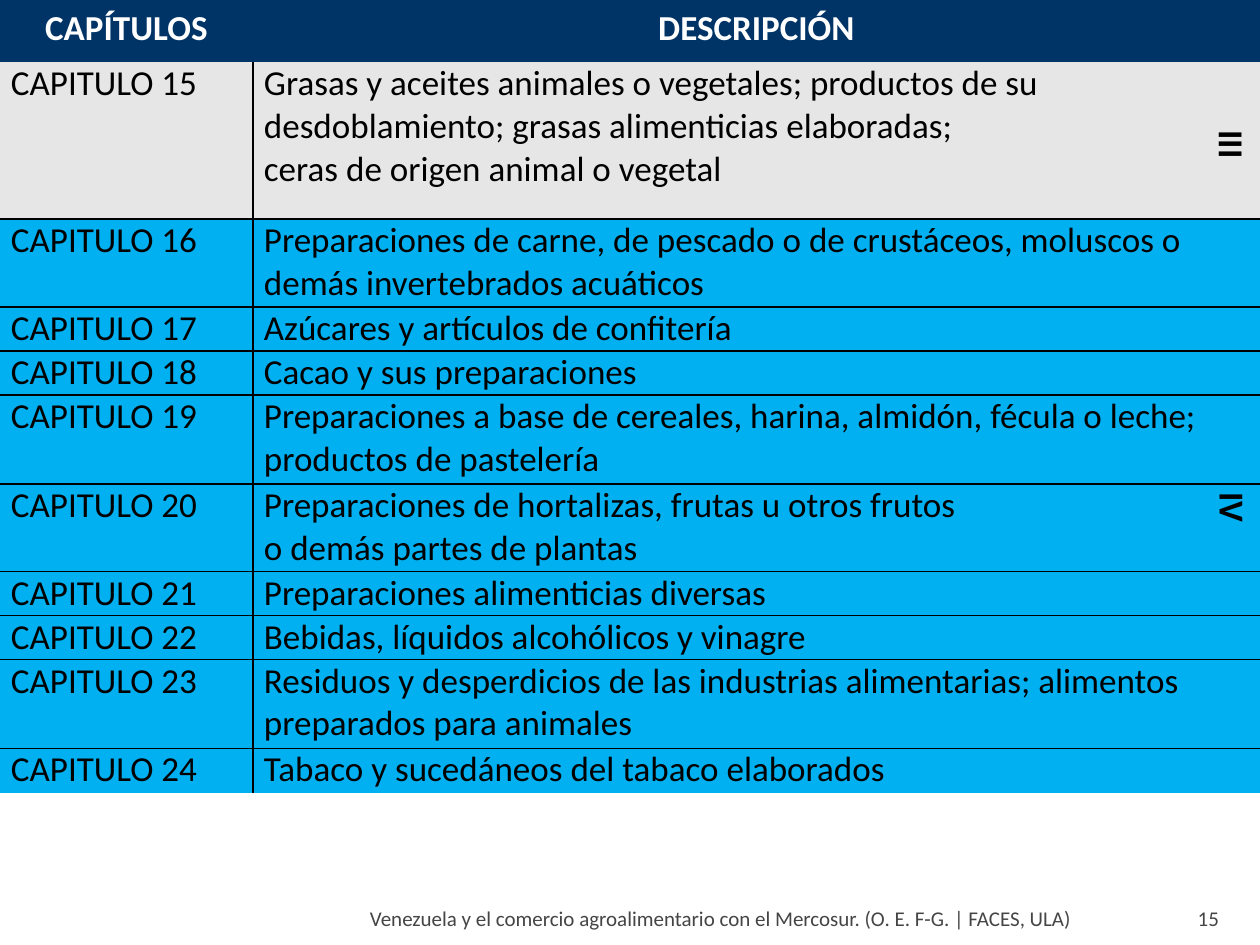
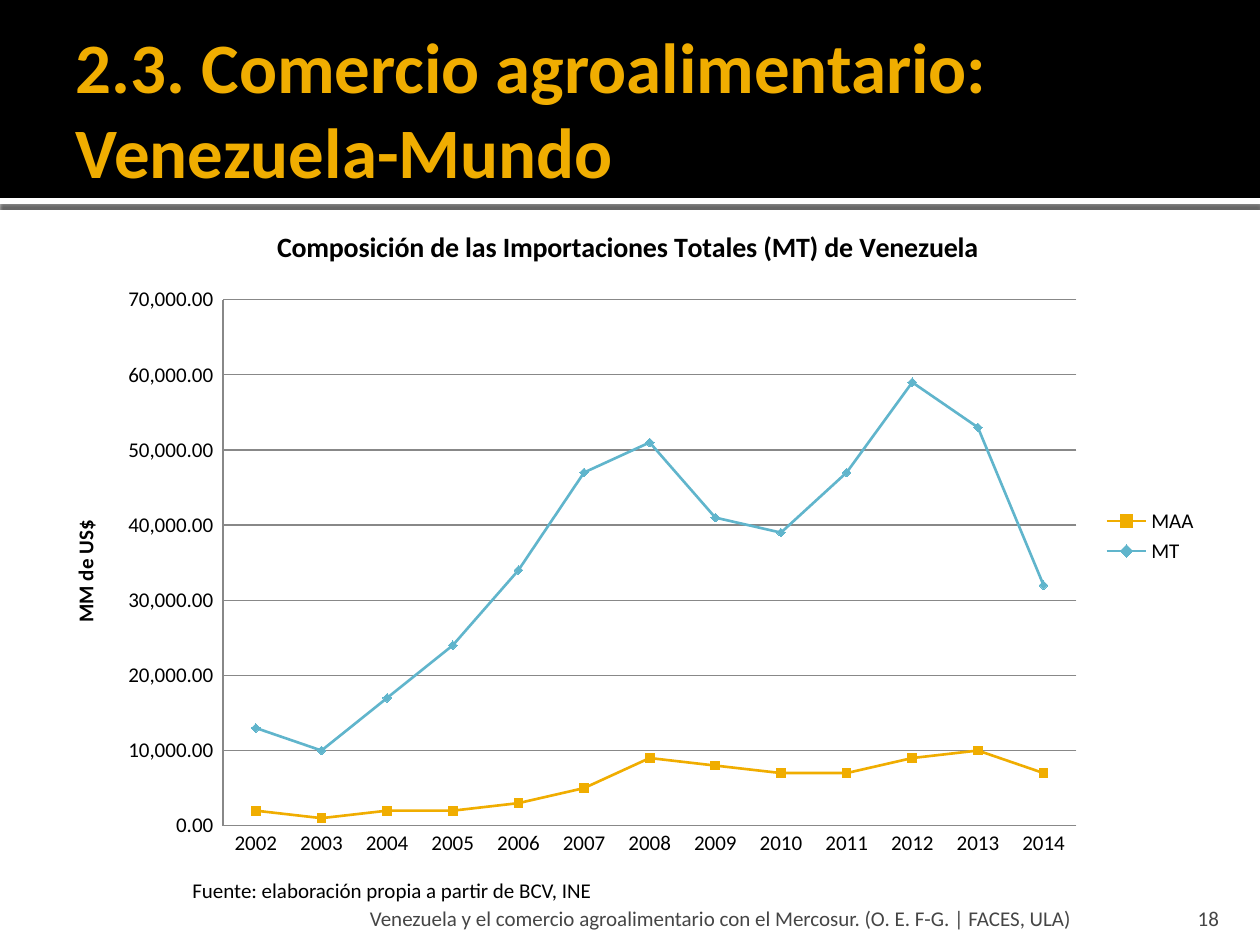
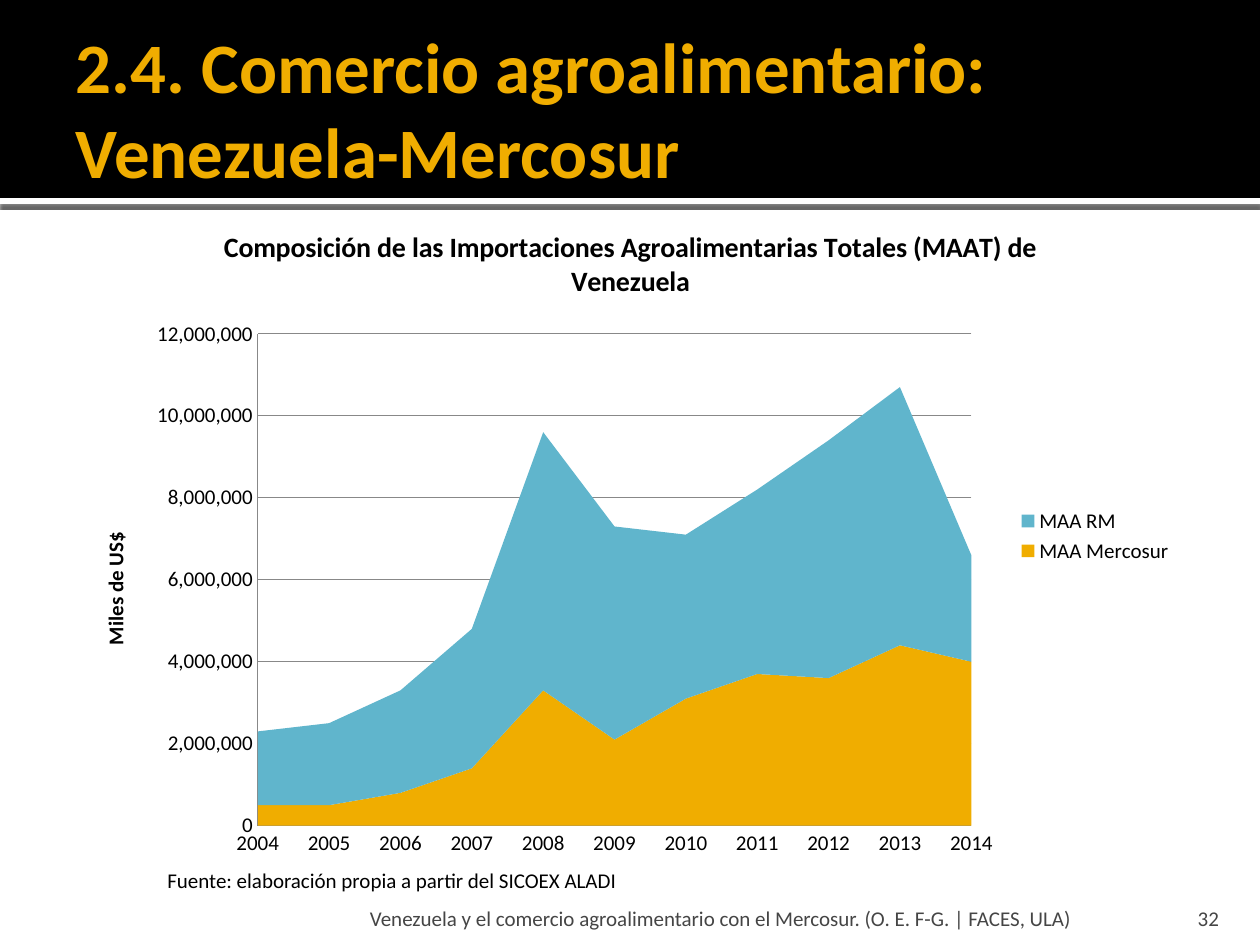
import pptx
import pptx.chart.data
import pptx.dml.color
import pptx.enum.chart
import pptx.enum.shapes
import pptx.enum.text
import pptx.oxml
import pptx.oxml.ns
import pptx.util

EMU_PER_PX = 914400 / 126

RGB = pptx.dml.color.RGBColor
BLACK = RGB(0x00, 0x00, 0x00)
WHITE = RGB(0xFF, 0xFF, 0xFF)
GOLD = RGB(0xF0, 0xAD, 0x00)
SKY = RGB(0x60, 0xB5, 0xCC)
NAVY = RGB(0x00, 0x33, 0x66)
LIGHT_GREY = RGB(0xE6, 0xE6, 0xE6)
BRIGHT_BLUE = RGB(0x00, 0xB0, 0xF0)
FOOTER_GREY = RGB(0x45, 0x45, 0x45)
GRID_GREY = RGB(0x88, 0x88, 0x88)

ALIGN = pptx.enum.text.PP_ALIGN
ANCHOR = pptx.enum.text.MSO_ANCHOR
CHART_TYPE = pptx.enum.chart.XL_CHART_TYPE
MARKER = pptx.enum.chart.XL_MARKER_STYLE
NAMESPACE = pptx.oxml.ns.nsdecls("a")

FOOTER = "Venezuela y el comercio agroalimentario con el Mercosur. (O. E. F-G. | FACES, ULA)"


def px(*lengths):
    """Turn pixel lengths into a list of EMU."""
    return [round(length * EMU_PER_PX) for length in lengths]


def write(frame, text, size, color, bold=False, align=ALIGN.LEFT,
          anchor=ANCHOR.TOP, insets=(13, 6, 13, 6)):
    """Fill the frame with text, one paragraph per line, insets in px."""
    left, top, right, bottom = px(*insets)
    layout = {"text": text, "word_wrap": True, "vertical_anchor": anchor,
              "margin_left": left, "margin_top": top,
              "margin_right": right, "margin_bottom": bottom}
    for name, value in layout.items():
        setattr(frame, name, value)
    for paragraph in frame.paragraphs:
        paragraph.alignment = align
        for name, value in {"name": "Calibri", "size": pptx.util.Pt(size), "bold": bold}.items():
            setattr(paragraph.font, name, value)
        paragraph.font.color.rgb = color


presentation = pptx.Presentation()
presentation.slide_width, presentation.slide_height = px(1260, 945)

# Shared bands and footers
slides = []
for page in ("15", "18", "32"):
    slide = presentation.slides.add_slide(presentation.slide_layouts[6])
    slides.append(slide)
    for box, color in (((0, 198, 1260, 6), WHITE), ((0, 0, 1260, 198), BLACK)):
        band = slide.shapes.add_shape(pptx.enum.shapes.MSO_SHAPE.RECTANGLE, *px(*box))
        band.shadow.inherit = False
        band.fill.solid()
        band.fill.fore_color.rgb = color
        band.line.fill.background()
        if color == WHITE:
            effects = band._element.spPr.find(pptx.oxml.ns.qn("a:effectLst"))
            effects.append(pptx.oxml.parse_xml(
                f'<a:outerShdw {NAMESPACE} blurRad="10160" dist="31750" dir="5400000">'
                '<a:srgbClr val="000000"><a:alpha val="60000"/></a:srgbClr></a:outerShdw>'))
    for box, text, align, side in (((364, 893, 759, 38), FOOTER, ALIGN.LEFT, 6),
                                   ((1131, 893, 101, 38), page, ALIGN.RIGHT, 13)):
        footer = slide.shapes.add_textbox(*px(*box))
        write(footer.text_frame, text, 12, FOOTER_GREY, align=align,
              anchor=ANCHOR.BOTTOM, insets=(side, 6, side, 0))

# Chapters table
chapters = [
    (157, "Grasas y aceites animales o vegetales; productos de su desdoblamiento; "
          "grasas alimenticias elaboradas;\nceras de origen animal o vegetal"),
    (88, "Preparaciones de carne, de pescado o de crustáceos, moluscos o demás "
         "invertebrados acuáticos"),
    (44, "Azúcares y artículos de confitería"),
    (44, "Cacao y sus preparaciones"),
    (89, "Preparaciones a base de cereales, harina, almidón, fécula o leche; "
         "productos de pastelería"),
    (88, "Preparaciones de hortalizas, frutas u otros frutos\no demás partes de plantas"),
    (44, "Preparaciones alimenticias diversas"),
    (44, "Bebidas, líquidos alcohólicos y vinagre"),
    (89, "Residuos y desperdicios de las industrias alimentarias; alimentos "
         "preparados para animales"),
    (44, "Tabaco y sucedáneos del tabaco elaborados"),
]
rows = [(66, "CAPÍTULOS", "DESCRIPCIÓN")]
rows += [(height, f"CAPITULO {number}", text)
         for number, (height, text) in enumerate(chapters, 15)]
table_height = sum(row[0] for row in rows)
table = slides[0].shapes.add_table(len(rows), 2, *px(0, -4, 1260, table_height)).table
table.first_row = table.horz_banding = False
for column, width in zip(table.columns, px(253, 1007)):
    column.width = width

for row, (height, *texts) in enumerate(rows):
    table.rows[row].height = px(height)[0]
    for column, text in enumerate(texts):
        cell = table.cell(row, column)
        if row == 0:
            write(cell.text_frame, text, 20, WHITE, True, ALIGN.CENTER, insets=(0, 0, 0, 0))
            cell.vertical_anchor = ANCHOR.MIDDLE
        else:
            write(cell.text_frame, text, 20, BLACK, insets=(11, 0, 0, 0))
        margins = px(11 if row else 0, 0, 0, 0)
        for side, margin in zip(("left", "top", "right", "bottom"), margins):
            setattr(cell, f"margin_{side}", margin)
        cell.fill.solid()
        cell.fill.fore_color.rgb = (NAVY, LIGHT_GREY)[row] if row < 2 else BRIGHT_BLUE
        borders = {"lnL": row > 0 and column == 1, "lnR": row > 0 and column == 0,
                   "lnT": row > 1, "lnB": 0 < row < len(rows) - 1}
        for position, (side, visible) in enumerate(borders.items()):
            paint = '<a:solidFill><a:srgbClr val="000000"/></a:solidFill>' if visible else "<a:noFill/>"
            cell._tc.get_or_add_tcPr().insert(position, pptx.oxml.parse_xml(
                f'<a:{side} {NAMESPACE} w="12700">{paint}</a:{side}>'))

for section, box in (("III", (1153, 117, 159, 55)), ("IV", (950, 480, 566, 55))):
    section_label = slides[0].shapes.add_textbox(*px(*box))
    section_label.rotation = 90
    write(section_label.text_frame, section, 20, BLACK, True, ALIGN.CENTER)

# Chart slides
trade_charts = [
    {"heading": "2.3. Comercio agroalimentario: Venezuela-Mundo",
     "title": "Composición de las Importaciones Totales (MT) de Venezuela",
     "kind": CHART_TYPE.LINE_MARKERS, "box": (45, 203, 1166, 666),
     "unit": "MM de US$", "format": r"#,##0.00_ ;[Red]\-#,##0.00\ ",
     "first_year": 2002, "maximum": 70000, "step": 10000,
     "series": {
         "MAA": [2000, 1000, 2000, 2000, 3000, 5000, 9000, 8000, 7000, 7000, 9000, 10000, 7000],
         "MT": [13000, 10000, 17000, 24000, 34000, 47000, 51000, 41000, 39000, 47000,
                59000, 53000, 32000]},
     "source": "Fuente: elaboración propia a partir de BCV, INE", "source_top": 872},
    {"heading": "2.4. Comercio agroalimentario: Venezuela-Mercosur",
     "title": "Composición de las Importaciones Agroalimentarias Totales (MAAT) de Venezuela",
     "kind": CHART_TYPE.AREA_STACKED, "box": (75, 203, 1111, 666),
     "unit": "Miles de US$", "format": "#,##0",
     "first_year": 2004, "maximum": 12000000, "step": 2000000,
     "series": {
         "MAA Mercosur": [500000, 500000, 800000, 1400000, 3300000, 2100000, 3100000,
                          3700000, 3600000, 4400000, 4000000],
         "MAA RM": [1800000, 2000000, 2500000, 3400000, 6300000, 5200000, 4000000,
                    4500000, 5800000, 6300000, 2600000]},
     "source": "Fuente: elaboración propia a partir del SICOEX ALADI", "source_top": 862},
]

for slide, trade in zip(slides[1:], trade_charts):
    heading = slide.shapes.add_textbox(*px(63, 21, 1134, 173))
    write(heading.text_frame, trade["heading"], 40.5, GOLD, True,
          anchor=ANCHOR.MIDDLE, insets=(13, 6, 6, 6))

    data = pptx.chart.data.CategoryChartData()
    year_count = len(list(trade["series"].values())[0])
    data.categories = [str(trade["first_year"] + year) for year in range(year_count)]
    for name, values in trade["series"].items():
        data.add_series(name, values)
    chart = slide.shapes.add_chart(trade["kind"], *px(*trade["box"]), data).chart
    chart.font.name = "Calibri"
    chart.font.size = pptx.util.Pt(12)
    chart.font.color.rgb = BLACK
    chart.has_legend = True
    chart.legend.position = pptx.enum.chart.XL_LEGEND_POSITION.RIGHT
    chart.legend.include_in_layout = False
    chart.plots[0].vary_by_categories = False

    years, amounts = chart.category_axis, chart.value_axis
    amounts.has_major_gridlines = True
    amounts.minimum_scale, amounts.maximum_scale = 0, trade["maximum"]
    amounts.major_unit = trade["step"]
    amounts.tick_labels.number_format = trade["format"]
    amounts.tick_labels.number_format_is_linked = False
    for axis in (years, amounts):
        axis.major_tick_mark = axis.minor_tick_mark = pptx.enum.chart.XL_TICK_MARK.NONE
    for line in (years.format.line, amounts.format.line, amounts.major_gridlines.format.line):
        line.color.rgb = GRID_GREY
        line.width = pptx.util.Pt(0.75)

    for titled, text, size in ((chart, trade["title"], 16), (amounts, trade["unit"], 12)):
        titled.has_title = True
        caption = titled.chart_title if titled is chart else titled.axis_title
        caption.text_frame.text = text
        font = caption.text_frame.paragraphs[0].runs[0].font
        for name, value in {"name": "Calibri", "size": pptx.util.Pt(size), "bold": True}.items():
            setattr(font, name, value)
        font.color.rgb = BLACK

    for series, color, marker in zip(chart.plots[0].series, (GOLD, SKY),
                                     (MARKER.SQUARE, MARKER.DIAMOND)):
        if trade["kind"] == CHART_TYPE.AREA_STACKED:
            series.format.fill.solid()
            series.format.fill.fore_color.rgb = color
            continue
        series.smooth = False
        series.format.line.color.rgb = color
        series.format.line.width = pptx.util.Pt(1.5)
        series.marker.style = marker
        series.marker.size = 5
        series.marker.format.fill.solid()
        series.marker.format.fill.fore_color.rgb = color
        series.marker.format.line.color.rgb = color

    source = slide.shapes.add_textbox(*px(144, trade["source_top"], 496, 38))
    write(source.text_frame, trade["source"], 12, BLACK, align=ALIGN.CENTER)

presentation.save("out.pptx")
